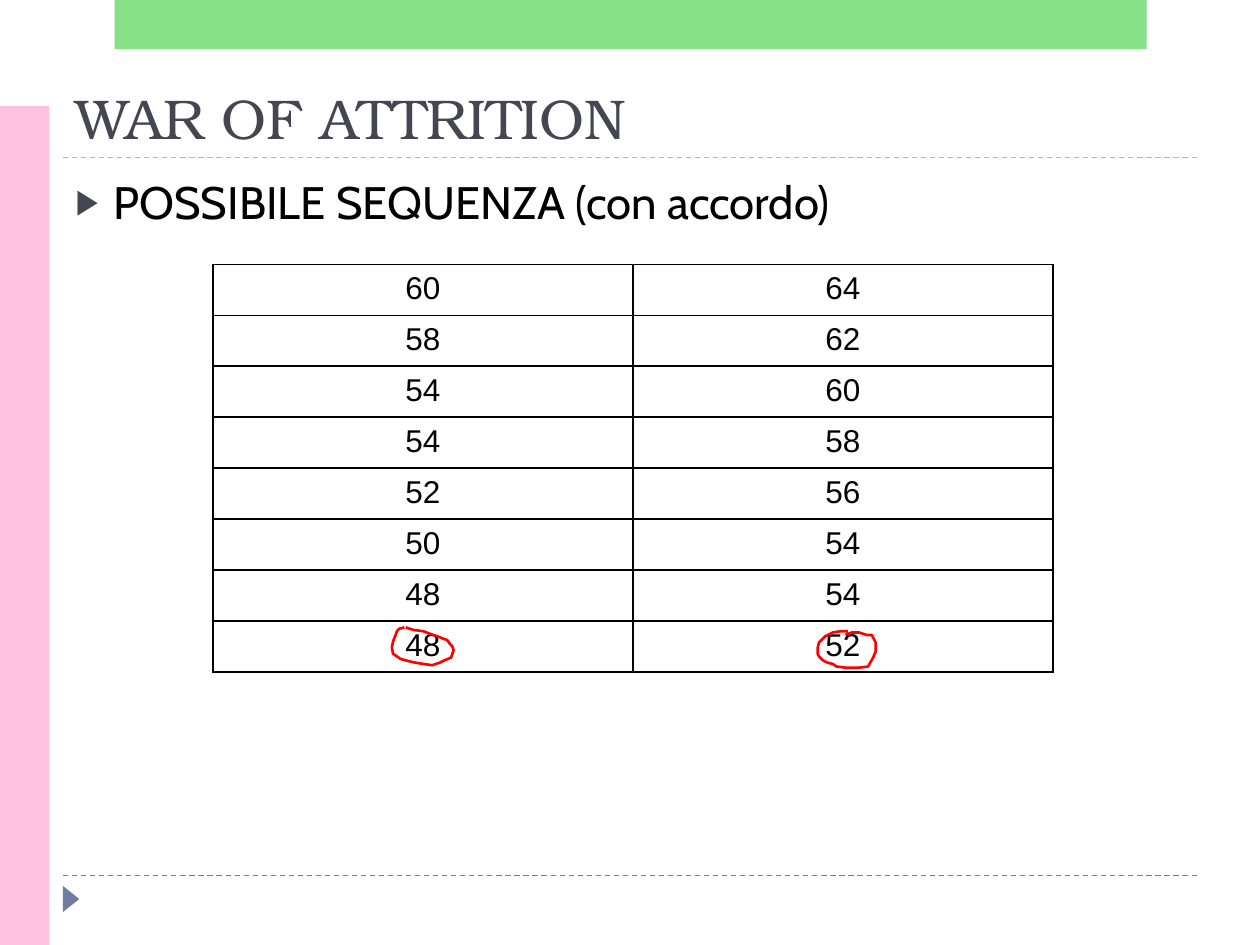
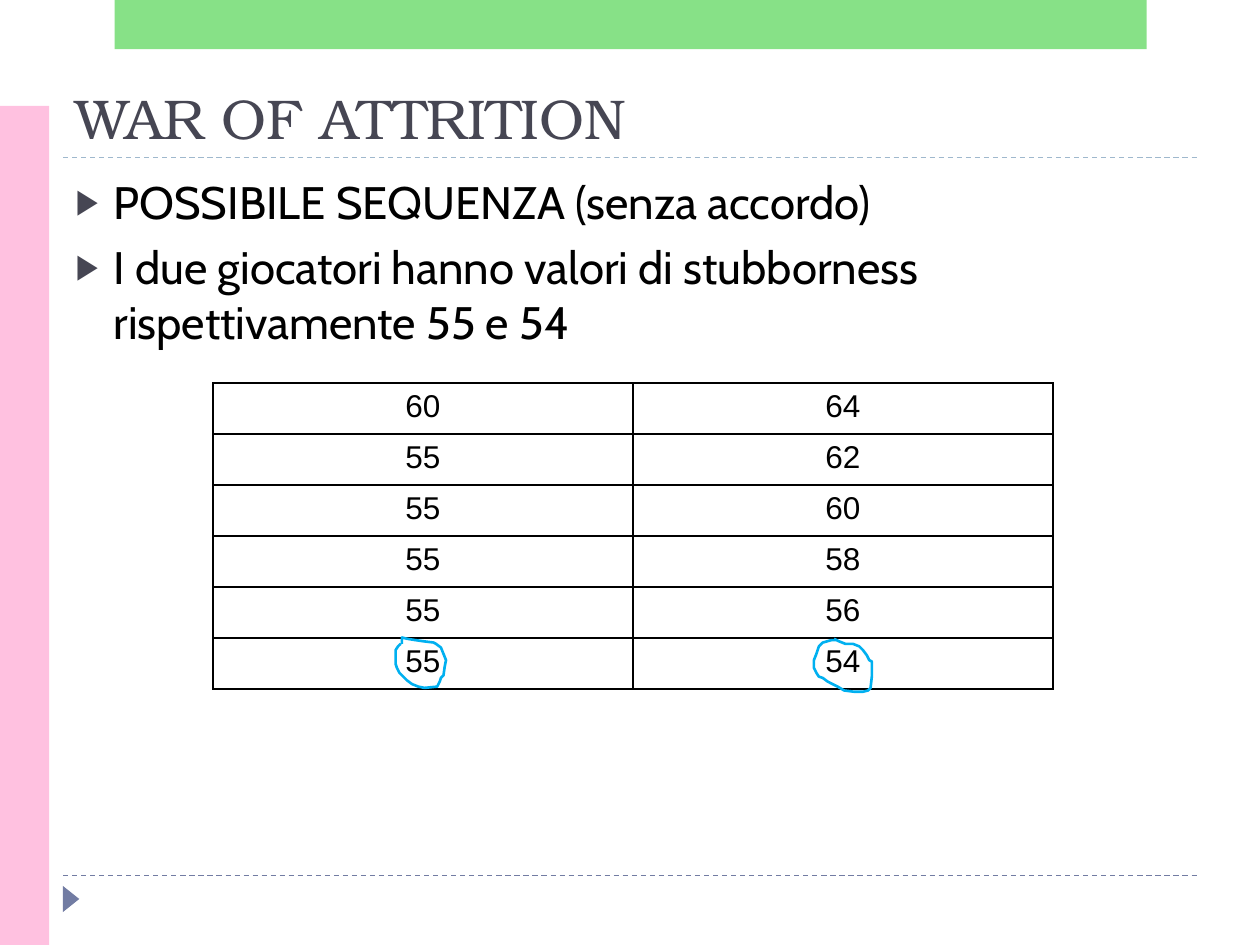
from lxml.etree import SubElement
from pptx import Presentation
from pptx.dml.color import RGBColor
from pptx.enum.dml import MSO_LINE
from pptx.enum.shapes import MSO_CONNECTOR, MSO_SHAPE
from pptx.enum.text import MSO_ANCHOR, MSO_AUTO_SIZE, PP_ALIGN
from pptx.oxml.ns import qn
from pptx.util import Pt

INK, SLATE, PALE_BLUE = "464653", "727CA3", "9FB8CD"
PINK, GREEN, BLACK = "FFC1E0", "62D862", "000000"
RED, SKY = "FF0000", "00B0F0"

TITLE_FONT = {"name": "TeX Gyre Bonum", "size": Pt(32), "color": INK}
BODY_FONT = {"name": "Cabin", "size": Pt(26), "color": BLACK}
CELL_FONT = {"name": "Arial", "size": Pt(18), "bold": False, "color": BLACK}
TITLE_BOX = (36, 39.6, 648, 50.4)
BODY_BOX = (36, 95.8, 648, 388.8)

TABLE_LEFT, COLUMN_WIDTH, ROW_HEIGHT = 121.7, 240, 29.16
BULLET_INDENT = 21.6
PEN_UNIT = Pt(0.72)  # pen strokes are plotted in hundredths of an inch

SLIDES = [
    {
        "bullets": ["POSSIBILE SEQUENZA (con accordo)"],
        "table_top": 151,
        "offers": [(60, 64), (58, 62), (54, 60), (54, 58),
                   (52, 56), (50, 54), (48, 54), (48, 52)],
        "pen": RED,
        "circles": [
            [(321, 498), (317, 499), (315, 501), (314, 504), (312, 509),
             (311, 514), (312, 519), (315, 521), (318, 523), (325, 525),
             (330, 526), (336, 527), (343, 527.5), (349, 526), (353, 524),
             (358, 522), (360, 516), (359, 513), (357, 511), (355, 508),
             (352, 507), (347, 505), (341, 503), (336, 501), (328, 500),
             (322, 498)],
            [(673, 501), (667, 501), (661, 502), (655, 505), (652, 508),
             (650, 510), (649, 514), (649, 519), (650, 521), (653, 524),
             (657, 526), (661, 527), (664, 529), (672, 530), (681, 530.5),
             (689, 529), (693, 522), (695, 517), (695, 510), (692, 504),
             (688, 504), (682, 502), (676, 502), (671, 504)],
        ],
    },
    {
        "bullets": ["POSSIBILE SEQUENZA (senza accordo)",
                    "I due giocatori hanno valori di stubborness "
                    "rispettivamente 55 e 54"],
        "table_top": 218.9,
        "offers": [(60, 64), (55, 62), (55, 60), (55, 58), (55, 56), (55, 54)],
        "pen": SKY,
        "circles": [
            [(318, 511), (316, 513), (314, 516), (314, 527), (315, 530),
             (317, 534), (320, 537), (323, 540), (327, 543), (332, 545),
             (337, 546), (347, 545), (349, 541), (350, 538), (352, 536),
             (353, 529), (353.5, 524), (352, 519), (350, 514), (346, 511),
             (344, 510), (336, 509), (329, 508), (323, 507), (319, 506),
             (319, 511)],
            [(664, 508), (660, 508), (653, 510), (650, 513), (648, 519),
             (646, 524), (646, 530), (648, 534), (650, 537), (653, 538),
             (657, 541), (665, 545), (670, 548), (678, 549), (685, 549),
             (689, 548), (691, 546), (692, 537), (692, 525), (690, 524),
             (688, 520), (685, 516), (682, 513), (677, 511), (671, 511),
             (666, 509), (662, 507)],
        ],
    },
]


def rgb(hex_color):
    return RGBColor.from_string(hex_color)


def format_font(font, values):
    for name, value in values.items():
        if name == "color":
            font.color.rgb = rgb(value)
        else:
            setattr(font, name, value)


def place(shape, box):
    for name, value in zip(("left", "top", "width", "height"), box):
        setattr(shape, name, Pt(value))


def add_block(slide, kind, box, color, rotation=0):
    shape = slide.shapes.add_shape(kind, *map(Pt, box))
    shape.shadow.inherit = False
    shape.rotation = rotation
    shape.fill.solid()
    shape.fill.fore_color.rgb = rgb(color)
    shape.line.fill.background()
    return shape


def add_dashed_rule(slide, y, color):
    rule = slide.shapes.add_connector(
        MSO_CONNECTOR.STRAIGHT, Pt(36), Pt(y), Pt(684), Pt(y))
    rule.line.color.rgb = rgb(color)
    rule.line.width = Pt(0.75)
    rule.line.dash_style = MSO_LINE.DASH
    SubElement(rule.element.spPr, qn("a:effectLst"))
    return rule


def set_transparency(shape, opacity):
    color = shape.element.spPr.find(qn("a:solidFill"))[0]
    SubElement(color, qn("a:alpha"), val=str(opacity * 1000))


def prepare_layout(layout):
    """Keep only the title and body placeholders, at their shared places."""
    for placeholder in list(layout.placeholders):
        index = placeholder.placeholder_format.idx
        if index > 1:
            placeholder.element.getparent().remove(placeholder.element)
        else:
            place(placeholder, (TITLE_BOX, BODY_BOX)[index])


def decorate_layout(slide):
    """Draw the shared rules and bands, then move them to the slide's layout."""
    top_band = (65.5, 0, 589.7, 28.1)
    decorations = [
        add_dashed_rule(slide, 500.4, SLATE),
        add_dashed_rule(slide, 90, PALE_BLUE),
        add_block(slide, MSO_SHAPE.ISOSCELES_TRIANGLE,
                  (33.1, 509, 15, 9.4), SLATE, rotation=90),
        add_block(slide, MSO_SHAPE.RECTANGLE, (0, 60.5, 28.1, 479.5), PINK),
        add_block(slide, MSO_SHAPE.RECTANGLE, top_band, GREEN),
    ]
    set_transparency(decorations[-1], 76)
    for shape in decorations:
        slide.slide_layout.shapes.element.append(shape.element)


def write_title(slide, text):
    frame = slide.shapes.title.text_frame
    frame.auto_size = MSO_AUTO_SIZE.NONE
    frame.vertical_anchor = MSO_ANCHOR.BOTTOM
    paragraph = frame.paragraphs[0]
    paragraph.alignment = PP_ALIGN.LEFT
    run = paragraph.add_run()
    run.text = text
    format_font(run.font, TITLE_FONT)


def add_bullet_mark(paragraph):
    properties = paragraph._p.get_or_add_pPr()
    properties.set("marL", str(Pt(BULLET_INDENT)))
    properties.set("indent", str(-Pt(BULLET_INDENT)))
    color = SubElement(properties, qn("a:buClr"))
    SubElement(color, qn("a:srgbClr"), val=INK)
    SubElement(properties, qn("a:buSzPct"), val="76000")
    SubElement(properties, qn("a:buChar"), char="▶")


def write_bullets(slide, lines):
    frame = slide.placeholders[1].text_frame
    frame.auto_size = MSO_AUTO_SIZE.NONE
    for number, line in enumerate(lines):
        paragraph = frame.add_paragraph() if number else frame.paragraphs[0]
        add_bullet_mark(paragraph)
        paragraph.space_before = Pt(6 if number else 0)
        run = paragraph.add_run()
        run.text = line
        format_font(run.font, BODY_FONT)


def add_cell_borders(cell):
    properties = cell._tc.get_or_add_tcPr()
    for side in ("lnL", "lnR", "lnT", "lnB"):
        border = SubElement(properties, qn(f"a:{side}"), w=str(Pt(1)))
        fill = SubElement(border, qn("a:solidFill"))
        SubElement(fill, qn("a:srgbClr"), val=BLACK)


def add_offer_table(slide, top, offers):
    rows, columns = len(offers), len(offers[0])
    table = slide.shapes.add_table(
        rows, columns, Pt(TABLE_LEFT), Pt(top),
        Pt(COLUMN_WIDTH * columns), Pt(ROW_HEIGHT * rows)).table
    table.first_row = table.horz_banding = False
    for row, offer in zip(table.rows, offers):
        row.height = Pt(ROW_HEIGHT)
        for cell, value in zip(row.cells, offer):
            add_cell_borders(cell)
            cell.fill.background()
            paragraph = cell.text_frame.paragraphs[0]
            paragraph.alignment = PP_ALIGN.CENTER
            run = paragraph.add_run()
            run.text = str(value)
            format_font(run.font, CELL_FONT)


def add_pen_circle(slide, points, color):
    builder = slide.shapes.build_freeform(*points[0], scale=PEN_UNIT)
    builder.add_line_segments(points[1:], close=False)
    circle = builder.convert_to_shape()
    circle.shadow.inherit = False
    circle.fill.background()
    circle.line.color.rgb = rgb(color)
    circle.line.width = Pt(1.5)


def main():
    presentation = Presentation()
    presentation.slide_width, presentation.slide_height = Pt(720), Pt(540)
    layout = presentation.slide_layouts[1]
    prepare_layout(layout)
    for number, content in enumerate(SLIDES):
        slide = presentation.slides.add_slide(layout)
        if number == 0:
            decorate_layout(slide)
        write_title(slide, "WAR OF ATTRITION")
        write_bullets(slide, content["bullets"])
        add_offer_table(slide, content["table_top"], content["offers"])
        for points in content["circles"]:
            add_pen_circle(slide, points, content["pen"])
    presentation.save("out.pptx")


if __name__ == "__main__":
    main()
